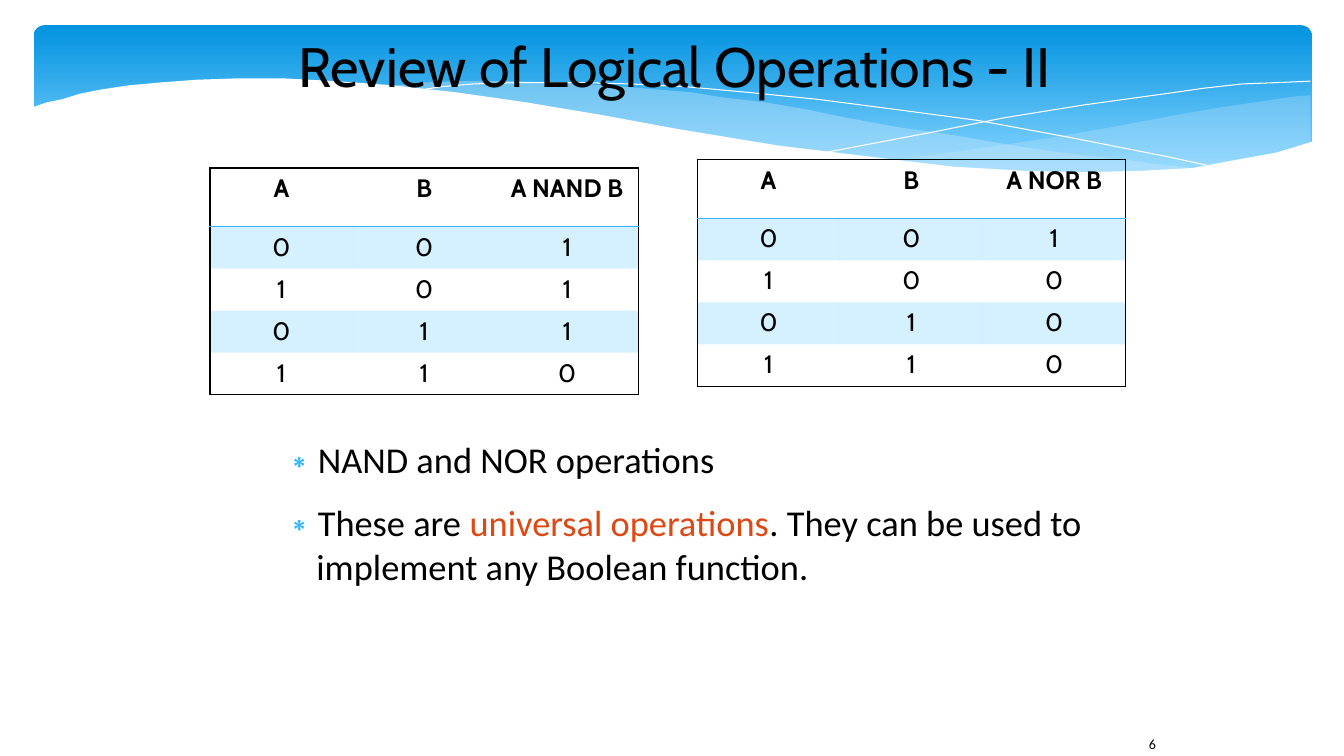
"""Build the slide on the NAND and NOR operations."""
import pptx
import pptx.util
import pptx.dml.color
import pptx.enum.shapes
import pptx.enum.text
import pptx.oxml
import pptx.oxml.ns

Pt = pptx.util.Pt
ALIGN = pptx.enum.text.PP_ALIGN
ANCHOR = pptx.enum.text.MSO_ANCHOR

HUES = {"ink": "000000", "white": "FFFFFF", "sky": "31B6FD", "mist": "C6E7FC",
        "top": "0293E0", "low": "83D3FE", "key": "DD4814"}

TITLE = "Review of Logical Operations - II"
BODY = [
    [("NAND and NOR operations", "ink")],
    [("These are ", "ink"), ("universal operations", "key"),
     (". They can be used to implement any Boolean function.", "ink")],
]
PAGE = "6"
PAIRS = [(0, 0), (1, 0), (0, 1), (1, 1)]
TABLES = [
    ("A NOR B", (1, 0, 0, 0), 498, 114),
    ("A NAND B", (1, 1, 1, 0), 150, 120),
]
COL, HEAD, ROW = 102, 42, 30

BANNER = (24, 18, 913, 112.5)
WAVES = [
    ([(936, 67.7), (923.5, 69), (897, 72.7), (870, 77), (841, 82), (799, 90),
      (747, 98.6), (700, 106), (656, 112.3), (635, 115.2), (663, 118), (690, 120),
      (715, 121.7), (738, 122.8), (760, 123.8), (791, 123.8), (820, 122.8),
      (845, 120.5), (869, 117.5), (891, 113.8), (911.5, 109.4), (936.5, 102.2),
      (936.5, 67.7)], "mist", 29),
    ([(856.5, 120.2), (831, 118), (803.5, 114.5), (775, 110.9), (744.5, 107.3),
      (712, 102.2), (677.5, 96.5), (641.5, 90.7), (604, 83.5), (575, 78.5),
      (546.5, 73.4), (519, 69.8), (494, 66.2), (469.5, 64), (446, 61.9),
      (403, 59), (364, 57.6), (330.5, 57.6), (301, 59), (275, 61.9),
      (292, 63.4), (328, 67.7), (368, 72.7), (410, 79.2), (431, 83.5),
      (471, 90.7), (508, 97.2), (543.5, 103), (577.5, 108), (609, 112.3),
      (639, 116), (667, 118.8), (693.5, 121), (718.5, 122.4), (742, 123.8),
      (764, 124.6), (785, 124.6), (805, 123.8), (824, 123.1), (840, 121.7)],
     "mist", 40),
    ([(296.5, 64.8), (315, 61.9), (338, 60.5), (371.5, 59), (415.5, 59),
      (450, 59.8), (489.5, 61.9), (534, 65.5), (584, 70.6), (638, 77.8),
      (698, 86.4), (763, 97.9), (834, 111.6), (871, 119.5)], "white", None),
    ([(589, 108.7), (626.5, 101.5), (667.5, 93.6), (718, 84.2), (774, 74.9),
      (831.5, 67), (859.5, 63.4), (887, 60.5), (912, 59), (936, 57.6)],
     "white", None),
    ([(938, 101.2), (911.5, 108.7), (883.5, 114.5), (852, 119.5), (816.5, 122.4),
      (776, 123.1), (731, 122.4), (679.5, 118.8), (621.5, 112.3), (556, 103.7),
      (483, 92.2), (429, 82.1), (375, 73.4), (326, 66.2), (281, 61.2),
      (240, 58.3), (203, 56.2), (169, 56.2), (139.5, 56.9), (114, 59),
      (91.5, 61.2), (72.5, 64.1), (57, 67), (44, 70.6), (34.5, 73.4),
      (27.5, 75), (22.3, 77), (22.3, 161.3), (938, 161.3)], "white", 100),
]

FLAT = {"margin_left": 0, "margin_top": 0, "margin_right": 0, "margin_bottom": 0,
        "word_wrap": True, "auto_size": pptx.enum.text.MSO_AUTO_SIZE.NONE}
FONTS = {
    "title": {"name": "Cabin", "size": Pt(39.6), "bold": False},
    "body": {"name": "Calibri", "size": Pt(26)},
    "page": {"name": "Calibri", "size": Pt(10)},
    "head": {"name": "Cabin", "size": Pt(18), "bold": True},
    "cell": {"name": "Cabin", "size": Pt(18), "bold": False},
}


def apply(thing, form):
    for key, value in form.items():
        setattr(thing, key, value)


def place(shape, *box):
    apply(shape, dict(zip(("left", "top", "width", "height"), map(Pt, box))))


def tint(color, hue, alpha=100):
    color.rgb = pptx.dml.color.RGBColor.from_string(HUES[hue])
    if alpha < 100:
        for mark in color._xFill.iter(pptx.oxml.ns.qn("a:srgbClr")):
            mark.append(node(f'<a:alpha {{}} val="{alpha * 1000}"/>'))


def node(text):
    return pptx.oxml.parse_xml(text.format(pptx.oxml.ns.nsdecls("a")))


def write(para, text, kind, hue="ink"):
    run = para.add_run()
    run.text = text
    apply(run.font, FONTS[kind])
    tint(run.font.color, hue)


def draw_band(slide):
    band = slide.shapes.add_shape(
        pptx.enum.shapes.MSO_SHAPE.ROUNDED_RECTANGLE, *map(Pt, BANNER))
    band.shadow.inherit = False
    band.adjustments[0] = 0.07
    band.line.fill.background()
    band.fill.gradient()
    band.fill.gradient_angle = 270
    for stop, hue, spot in zip(band.fill.gradient_stops, ("top", "low"), (0, 0.9)):
        tint(stop.color, hue)
        stop.position = spot


def draw_wave(slide, points, hue, alpha):
    pen = slide.shapes.build_freeform(*points[0], scale=Pt(1))
    pen.add_line_segments(points[1:], close=alpha is not None)
    wave = pen.convert_to_shape()
    wave.shadow.inherit = False
    if alpha is None:
        wave.fill.background()
        tint(wave.line.color, hue)
        wave.line.width = Pt(0)
    else:
        wave.fill.solid()
        tint(wave.fill.fore_color, hue, alpha)
        wave.line.fill.background()


def edge(cell, sides):
    for spot, side in enumerate("LRTB"):
        hue = sides.get(side)
        fill = (f'<a:solidFill><a:srgbClr val="{HUES[hue]}"/></a:solidFill>'
                if hue else "<a:noFill/>")
        line = node(f'<a:ln{side} {{}} w="12700">{fill}</a:ln{side}>')
        cell._tc.get_or_add_tcPr().insert(spot, line)


def draw_table(slide, name, outs, left, top):
    rows = [("A", "B", name)] + [(*pair, out) for pair, out in zip(PAIRS, outs)]
    last = len(rows) - 1
    high = HEAD + ROW * last
    grid = slide.shapes.add_table(len(rows), 3, *map(Pt, (left, top, 3 * COL, high))).table
    apply(grid, {"first_row": False, "horz_banding": False})
    for col in grid.columns:
        col.width = Pt(COL)
    for r, row in enumerate(rows):
        grid.rows[r].height = Pt(ROW if r else HEAD)
        for c, value in enumerate(row):
            cell = grid.cell(r, c)
            para = cell.text_frame.paragraphs[0]
            para.alignment = ALIGN.CENTER
            write(para, str(value), "cell" if r else "head")
            if r % 2:
                cell.fill.solid()
                tint(cell.fill.fore_color, "sky", 20)
            else:
                cell.fill.background()
            edge(cell, {"L": "ink" if c == 0 else None,
                        "R": "ink" if c == 2 else None,
                        "T": {0: "ink", 1: "sky"}.get(r),
                        "B": {0: "sky", last: "ink"}.get(r)})


def fill_text(slide):
    title, body = slide.shapes.title, slide.placeholders[1]
    for shape in (title, body):
        slide.shapes._spTree.append(shape._element)
        apply(shape.text_frame, FLAT)
    place(title, 190, 10, 584, 73.5)
    title.text_frame.vertical_anchor = ANCHOR.MIDDLE
    para = title.text_frame.paragraphs[0]
    para.alignment = ALIGN.CENTER
    write(para, TITLE, "title")
    place(body, 192, 312, 584, 145.5)
    frame = body.text_frame
    for n, runs in enumerate(BODY):
        para = frame.add_paragraph() if n else frame.paragraphs[0]
        form = para._p.get_or_add_pPr()
        apply(form, {"marL": Pt(34), "indent": Pt(-25)})
        form.set("marL", str(Pt(34)))
        form.set("indent", str(Pt(-25)))
        form.append(node(f'<a:buClr {{}}><a:srgbClr val="{HUES["sky"]}"/></a:buClr>'))
        form.append(node('<a:buChar {} char="∗"/>'))
        apply(para, {"space_before": Pt(0), "space_after": Pt(14.1)})
        for text, hue in runs:
            write(para, text, "body", hue)
    page = slide.shapes.add_textbox(*map(Pt, (813.6, 522, 44, 28.8)))
    page.text_frame.word_wrap = True
    write(page.text_frame.paragraphs[0], PAGE, "page")


def main():
    deck = pptx.Presentation()
    apply(deck, {"slide_width": Pt(960), "slide_height": Pt(540)})
    slide = deck.slides.add_slide(deck.slide_layouts[1])
    draw_band(slide)
    for wave in WAVES:
        draw_wave(slide, *wave)
    fill_text(slide)
    for table in TABLES:
        draw_table(slide, *table)
    deck.save("out.pptx")


if __name__ == "__main__":
    main()
